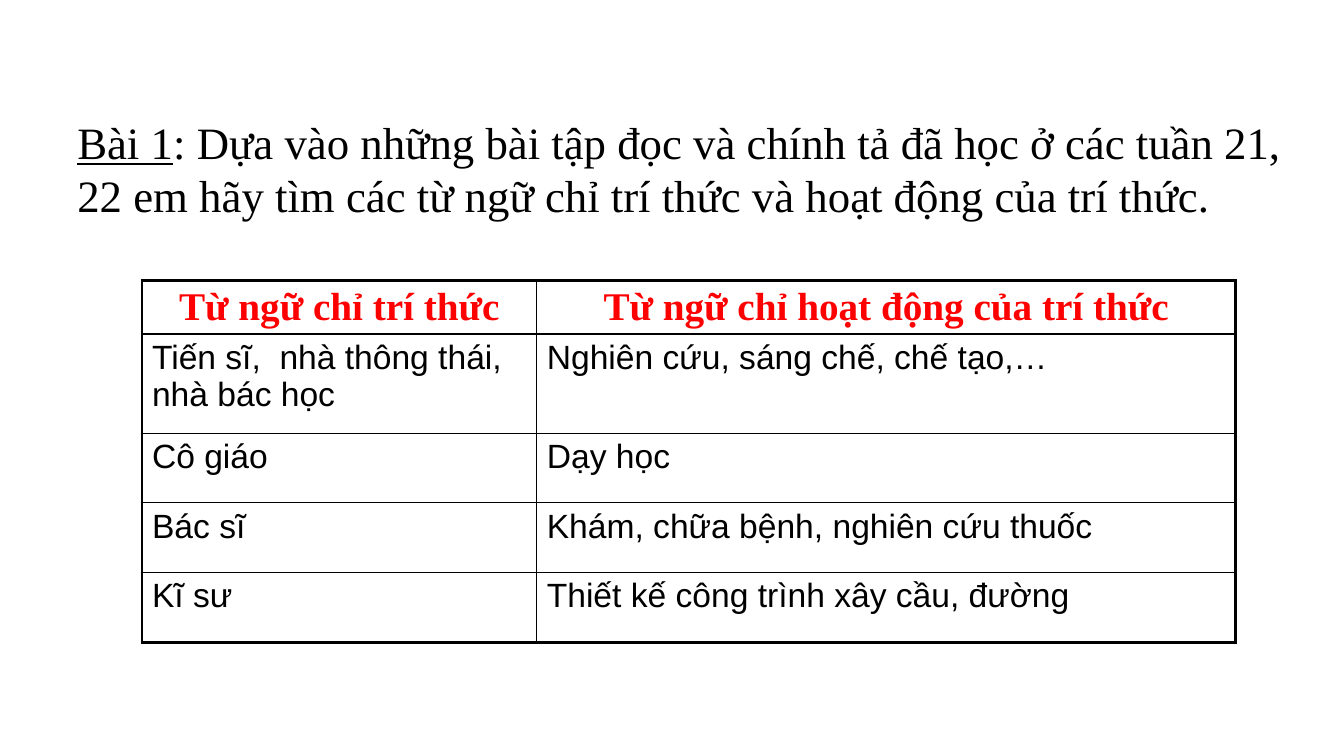
from lxml import etree
from pptx import Presentation
from pptx.dml.color import RGBColor
from pptx.enum.text import MSO_ANCHOR, MSO_AUTO_SIZE, PP_ALIGN
from pptx.oxml.ns import qn
from pptx.util import Inches, Pt

TOP = MSO_ANCHOR.TOP
FIXED = MSO_AUTO_SIZE.NONE
LEFT, CENTER = PP_ALIGN.LEFT, PP_ALIGN.CENTER

BLACK, RED, WHITE = "000000", "FF0000", "FFFFFF"
UNIT = 1 / 12  # the slide is a grid of 160 columns by 90 rows
THIN, THICK = 1, 2.25

TASK = [
    ("Bài 1", True),
    (": Dựa vào những bài tập đọc và chính tả đã học ở các tuần 21, 22 em "
     "hãy tìm các từ ngữ chỉ trí thức và hoạt động của trí thức.", False),
]
WORDS = [
    ("Từ ngữ chỉ trí thức", "Từ ngữ chỉ hoạt động của trí thức"),
    ("Tiến sĩ,  nhà thông thái, nhà bác học", "Nghiên cứu, sáng chế, chế tạo,…"),
    ("Cô giáo", "Dạy học"),
    ("Bác sĩ", "Khám, chữa bệnh, nghiên cứu thuốc"),
    ("Kĩ sư", "Thiết kế công trình xây cầu, đường"),
]


def grid(count):
    return Inches(count * UNIT)


def color(code):
    return RGBColor.from_string(code)


def assign(item, values):
    for name, value in values.items():
        setattr(item, name, value)


class Page:
    task = {"name": "Times New Roman", "size": Pt(32), "bold": False}
    head = {"name": "Times New Roman", "size": Pt(28), "bold": True}
    body = {"name": "Arial", "size": Pt(24), "bold": False}

    def __init__(self, deck):
        self.slide = deck.slides.add_slide(deck.slide_layouts[5])

    def label(self, para, text, style, code, line=False):
        run = para.add_run()
        run.text = text
        assign(run.font, {**style, "underline": line})
        run.font.color.rgb = color(code)

    def title(self, parts, left, top, width, height):
        shape = self.slide.shapes.title
        assign(shape, {"left": grid(left), "top": grid(top),
                       "width": grid(width), "height": grid(height)})
        frame = shape.text_frame
        assign(frame, {"word_wrap": True, "auto_size": FIXED,
                       "vertical_anchor": TOP})
        para = frame.paragraphs[0]
        para.alignment = LEFT
        for text, line in parts:
            self.label(para, text, self.task, BLACK, line)

    def border(self, cell, widths):
        """Draw the left, right, top and bottom edges, widths in points."""
        props = cell._tc.get_or_add_tcPr()
        for place, (side, width) in enumerate(zip("LRTB", widths)):
            edge = etree.Element(qn(f"a:ln{side}"), w=str(Pt(width)))
            fill = etree.SubElement(edge, qn("a:solidFill"))
            etree.SubElement(fill, qn("a:srgbClr"), val=BLACK)
            props.insert(place, edge)

    def table(self, data, left, top, cols, rows):
        table = self.slide.shapes.add_table(
            len(rows), len(cols), grid(left), grid(top),
            grid(sum(cols)), grid(sum(rows))).table
        assign(table, {"first_row": False, "horz_banding": False})
        for col, width in zip(table.columns, cols):
            col.width = grid(width)
        for row, height in zip(table.rows, rows):
            row.height = grid(height)
        for i, texts in enumerate(data):
            for j, text in enumerate(texts):
                cell = table.cell(i, j)
                cell.fill.solid()
                cell.fill.fore_color.rgb = color(WHITE)
                para = cell.text_frame.paragraphs[0]
                para.alignment = LEFT if i else CENTER
                self.label(para, text, self.body if i else self.head,
                           BLACK if i else RED)
                outer = (j == 0, j == len(cols) - 1,
                         i == 0, i == len(rows) - 1)
                self.border(cell, [THICK if edge else THIN for edge in outer])


def main():
    deck = Presentation()
    assign(deck, {"slide_width": grid(160), "slide_height": grid(90)})
    page = Page(deck)
    page.title(TASK, 8, 13, 148, 14.2)
    page.table(WORDS, 16.9, 33.4, [47, 83.2], [5.9, 11.8] + [8.3] * 3)
    deck.save("out.pptx")


if __name__ == "__main__":
    main()
